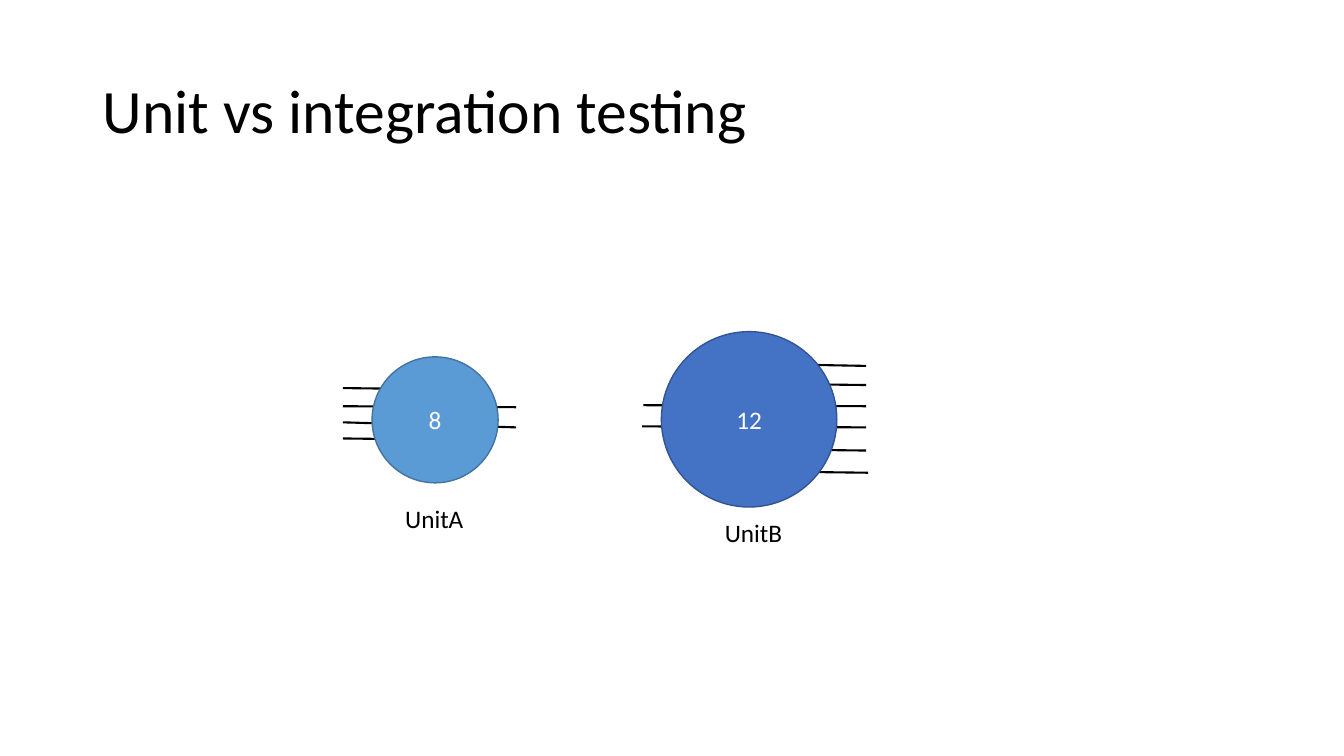
import dataclasses

import pptx
import pptx.dml.color
import pptx.enum.shapes
import pptx.enum.text
import pptx.oxml.xmlchemy
import pptx.util
from pptx.util import Inches


@dataclasses.dataclass(frozen=True)
class Theme:
    font: str = "Calibri"
    title_size: int = 44
    body_size: int = 18
    ink: str = "000000"
    paper: str = "FFFFFF"
    unit_a: str = "5B9BD5"
    unit_a_edge: str = "43739E"
    unit_b: str = "4472C4"
    unit_b_edge: str = "325491"
    wire_width: float = 1.5
    edge_width: float = 1


def rgb(colour):
    return pptx.dml.color.RGBColor.from_string(colour)


def write_text(frame, text, *, font, size, colour, align=None, anchor=None, spacing=None, wrap=True):
    frame.word_wrap = wrap
    frame.vertical_anchor = anchor
    paragraph = frame.paragraphs[0]
    paragraph.alignment = align
    paragraph.line_spacing = spacing
    run = paragraph.add_run()
    run.text = text
    run.font.name = font
    run.font.size = pptx.util.Pt(size)
    run.font.color.rgb = rgb(colour)


class SlideBuilder:
    def __init__(self, slide, theme):
        self.slide = slide
        self.theme = theme
        slide.background.fill.solid()
        slide.background.fill.fore_color.rgb = rgb(theme.paper)

    def wire(self, left, start_y, right, end_y):
        wire = self.slide.shapes.add_connector(
            pptx.enum.shapes.MSO_CONNECTOR.STRAIGHT,
            Inches(left), Inches(start_y), Inches(right), Inches(end_y))
        wire.line.color.rgb = rgb(self.theme.ink)
        wire.line.width = pptx.util.Pt(self.theme.wire_width)
        wire._element.spPr.append(pptx.oxml.xmlchemy.OxmlElement("a:effectLst"))

    def title(self, text, left, top, width, height):
        heading = self.slide.shapes.add_textbox(
            Inches(left), Inches(top), Inches(width), Inches(height))
        write_text(heading.text_frame, text, font=self.theme.font,
                   size=self.theme.title_size, colour=self.theme.ink,
                   anchor=pptx.enum.text.MSO_ANCHOR.MIDDLE, spacing=0.9)

    def unit(self, count, left, top, diameter, fill, edge):
        unit = self.slide.shapes.add_shape(
            pptx.enum.shapes.MSO_SHAPE.OVAL,
            Inches(left), Inches(top), Inches(diameter), Inches(diameter))
        unit.shadow.inherit = False
        unit.fill.solid()
        unit.fill.fore_color.rgb = rgb(fill)
        unit.line.color.rgb = rgb(edge)
        unit.line.width = pptx.util.Pt(self.theme.edge_width)
        write_text(unit.text_frame, count, font=self.theme.font,
                   size=self.theme.body_size, colour=self.theme.paper,
                   align=pptx.enum.text.PP_ALIGN.CENTER,
                   anchor=pptx.enum.text.MSO_ANCHOR.MIDDLE)

    def label(self, text, left, top):
        label = self.slide.shapes.add_textbox(
            Inches(left), Inches(top), Inches(0.78), Inches(0.4))
        write_text(label.text_frame, text, font=self.theme.font,
                   size=self.theme.body_size, colour=self.theme.ink, wrap=False)
        label.text_frame.auto_size = pptx.enum.text.MSO_AUTO_SIZE.SHAPE_TO_FIT_TEXT


def main():
    presentation = pptx.Presentation()
    presentation.slide_width = Inches(13.33)
    presentation.slide_height = Inches(7.5)
    theme = Theme()
    builder = SlideBuilder(
        presentation.slides.add_slide(presentation.slide_layouts[6]), theme)

    unit_b_wires = [
        (6.38, 4.02, 8.59, 4.03),
        (6.37, 4.23, 8.59, 4.24),
        (6.97, 4.45, 8.59, 4.47),
        (6.97, 3.8, 8.59, 3.82),
        (6.97, 3.6, 8.59, 3.63),
        (6.98, 4.67, 8.61, 4.69),
    ]
    unit_a_wires = [
        (3.4, 4.35, 4.2, 4.36),
        (3.4, 4.19, 5.12, 4.24),
        (3.4, 4.03, 5.12, 4.04),
        (3.4, 3.85, 4.2, 3.86),
    ]
    for wire in unit_b_wires + unit_a_wires:
        builder.wire(*wire)

    builder.title("Unit vs integration testing", 0.92, 0.4, 11.5, 1.45)
    builder.unit("8", 3.69, 3.54, 1.25, theme.unit_a, theme.unit_a_edge)
    builder.unit("12", 6.56, 3.29, 1.74, theme.unit_b, theme.unit_b_edge)
    builder.label("UnitA", 3.92, 4.94)
    builder.label("UnitB", 7.09, 5.08)

    presentation.save("out.pptx")


if __name__ == "__main__":
    main()
